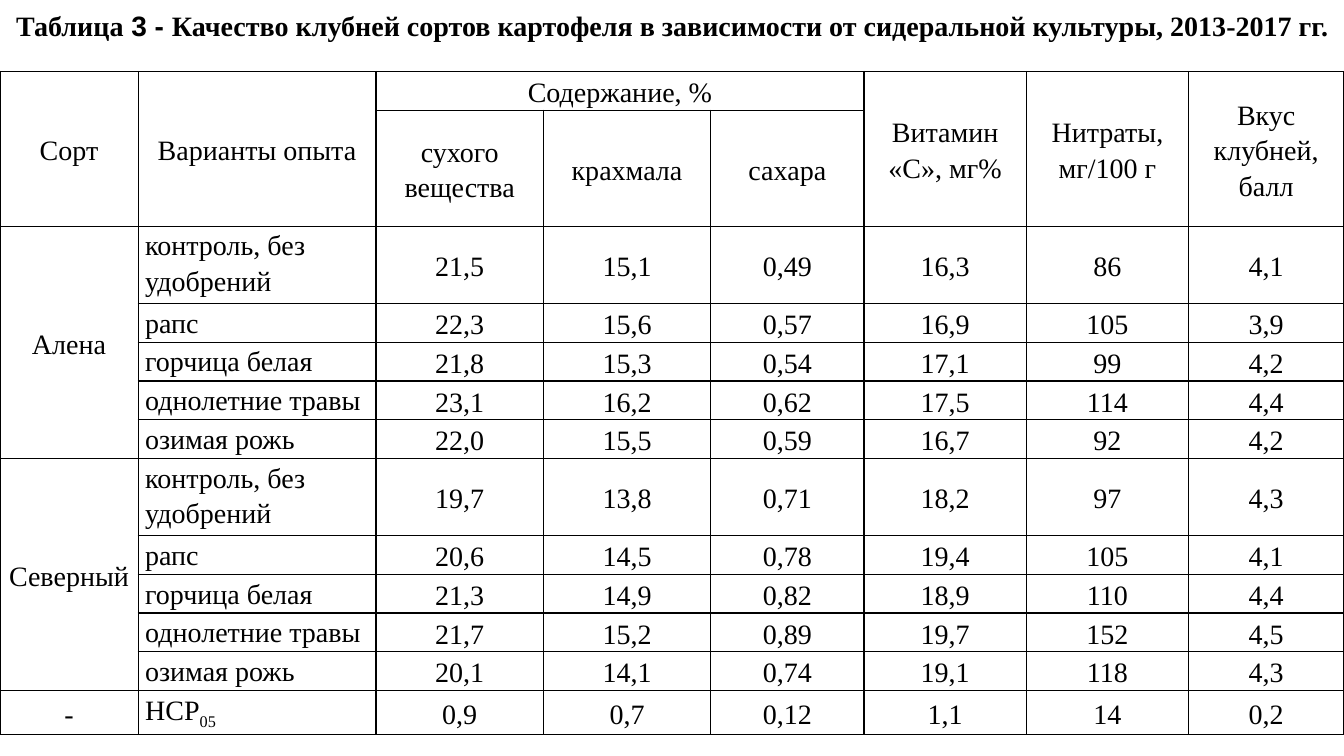
from dataclasses import dataclass

from lxml import etree
from pptx import Presentation
from pptx import util as u
from pptx.dml.color import RGBColor
from pptx.enum import text as t
from pptx.oxml.ns import qn


@dataclass(frozen=True)
class Theme:
    ink: str = "000000"
    serif: str = "Times New Roman"
    sans: str = "Arial"
    size: int = 20
    border: float = 1
    spacing: float = 1.15
    cell_margin: float = 0.07


@dataclass(frozen=True)
class Heading:
    row: int
    column: int
    label: str
    rows: int = 1
    columns: int = 1


@dataclass(frozen=True)
class Variety:
    name: str
    results: tuple[str, ...]


THEME = Theme()

HEADINGS = (
    Heading(0, 0, "Сорт", rows=2),
    Heading(0, 1, "Варианты опыта", rows=2),
    Heading(0, 2, "Содержание, %", columns=3),
    Heading(0, 5, "Витамин «С», мг%", rows=2),
    Heading(0, 6, "Нитраты, мг/100 г", rows=2),
    Heading(0, 7, "Вкус клубней, балл", rows=2),
    Heading(1, 2, "сухого вещества"),
    Heading(1, 3, "крахмала"),
    Heading(1, 4, "сахара"),
)
VARIANTS = ("контроль, без удобрений", "рапс", "горчица белая",
            "однолетние травы", "озимая рожь")
VARIETIES = (
    Variety("Алена", (
        "21,5 15,1 0,49 16,3 86 4,1",
        "22,3 15,6 0,57 16,9 105 3,9",
        "21,8 15,3 0,54 17,1 99 4,2",
        "23,1 16,2 0,62 17,5 114 4,4",
        "22,0 15,5 0,59 16,7 92 4,2",
    )),
    Variety("Северный", (
        "19,7 13,8 0,71 18,2 97 4,3",
        "20,6 14,5 0,78 19,4 105 4,1",
        "21,3 14,9 0,82 18,9 110 4,4",
        "21,7 15,2 0,89 19,7 152 4,5",
        "20,1 14,1 0,74 19,1 118 4,3",
    )),
)
LEAST_DIFFERENCE = "0,9 0,7 0,12 1,1 14 0,2"

COLUMN_WIDTHS = (1.37, 2.36, 1.66, 1.66, 1.52, 1.61, 1.61, 1.54)
LINE_HEIGHT = 0.38
VARIETY_HEIGHTS = (2 * LINE_HEIGHT,) + (LINE_HEIGHT,) * (len(VARIANTS) - 1)
ROW_HEIGHTS = (LINE_HEIGHT, 1.15, *VARIETY_HEIGHTS * len(VARIETIES), 0.44)


def write(paragraph, text: str, *, font: str = THEME.serif,
          bold: bool = False, subscript: bool = False) -> None:
    run = paragraph.add_run()
    run.text = text
    run.font.name = font
    run.font.size = u.Pt(THEME.size)
    run.font.bold = bold
    run.font.color.rgb = RGBColor.from_string(THEME.ink)
    if subscript:
        run.font._element.set("baseline", "-25000")


def outline(cell) -> None:
    properties = cell._tc.get_or_add_tcPr()
    for side in ("a:lnL", "a:lnR", "a:lnT", "a:lnB"):
        line = etree.SubElement(properties, qn(side), w=str(u.Pt(THEME.border)))
        fill = etree.SubElement(line, qn("a:solidFill"))
        etree.SubElement(fill, qn("a:srgbClr"), val=THEME.ink)


def fill_cell(cell, label: str, *, centred: bool = True, subscript: str = "") -> None:
    paragraph = cell.text_frame.paragraphs[0]
    paragraph.line_spacing = THEME.spacing
    if centred:
        paragraph.alignment = t.PP_ALIGN.CENTER
        cell.vertical_anchor = t.MSO_ANCHOR.MIDDLE
    write(paragraph, label)
    if subscript:
        write(paragraph, subscript, subscript=True)


def fill_results(table, row: int, results: str) -> None:
    for column, value in enumerate(results.split(), start=2):
        fill_cell(table.cell(row, column), value)


def add_title(slide) -> None:
    title = slide.shapes.title
    title.left, title.top = u.Inches(0.01), u.Inches(0.03)
    title.width, title.height = u.Inches(13.32), u.Inches(0.44)
    frame = title.text_frame
    frame.word_wrap = False
    frame.auto_size = t.MSO_AUTO_SIZE.SHAPE_TO_FIT_TEXT
    frame.vertical_anchor = t.MSO_ANCHOR.MIDDLE
    heading = frame.paragraphs[0]
    heading.alignment = t.PP_ALIGN.CENTER
    write(heading, "Таблица", bold=True)
    write(heading, " 3 - ", font=THEME.sans, bold=True)
    write(heading, "Качество клубней сортов картофеля в зависимости "
                   "от сидеральной культуры, 2013-2017 гг.", bold=True)


def add_empty_table(slide):
    table = slide.shapes.add_table(
        len(ROW_HEIGHTS), len(COLUMN_WIDTHS), u.Inches(0), u.Inches(0.71),
        u.Inches(sum(COLUMN_WIDTHS)), u.Inches(sum(ROW_HEIGHTS))).table
    table.first_row = table.horz_banding = False
    for column, width in zip(table.columns, COLUMN_WIDTHS):
        column.width = u.Inches(width)
    for row, height in zip(table.rows, ROW_HEIGHTS):
        row.height = u.Inches(height)
    for cell in table.iter_cells():
        outline(cell)
        cell.fill.background()
        cell.margin_left = cell.margin_right = u.Inches(THEME.cell_margin)
        cell.margin_top = cell.margin_bottom = 0
    return table


def add_quality_table(slide) -> None:
    table = add_empty_table(slide)
    for heading in HEADINGS:
        cell = table.cell(heading.row, heading.column)
        if heading.rows > 1 or heading.columns > 1:
            cell.merge(table.cell(heading.row + heading.rows - 1,
                                  heading.column + heading.columns - 1))
        fill_cell(cell, heading.label)

    row = 2
    for variety in VARIETIES:
        name = table.cell(row, 0)
        name.merge(table.cell(row + len(VARIANTS) - 1, 0))
        fill_cell(name, variety.name)
        for variant, results in zip(VARIANTS, variety.results):
            fill_cell(table.cell(row, 1), variant, centred=False)
            fill_results(table, row, results)
            row += 1

    fill_cell(table.cell(row, 0), "-")
    fill_cell(table.cell(row, 1), "НСР", centred=False, subscript="05")
    fill_results(table, row, LEAST_DIFFERENCE)


def main() -> None:
    deck = Presentation()
    deck.slide_width, deck.slide_height = u.Inches(13.33), u.Inches(7.5)
    slide = deck.slides.add_slide(deck.slide_layouts.get_by_name("Title Only"))
    add_title(slide)
    add_quality_table(slide)
    deck.save("out.pptx")


if __name__ == "__main__":
    main()
